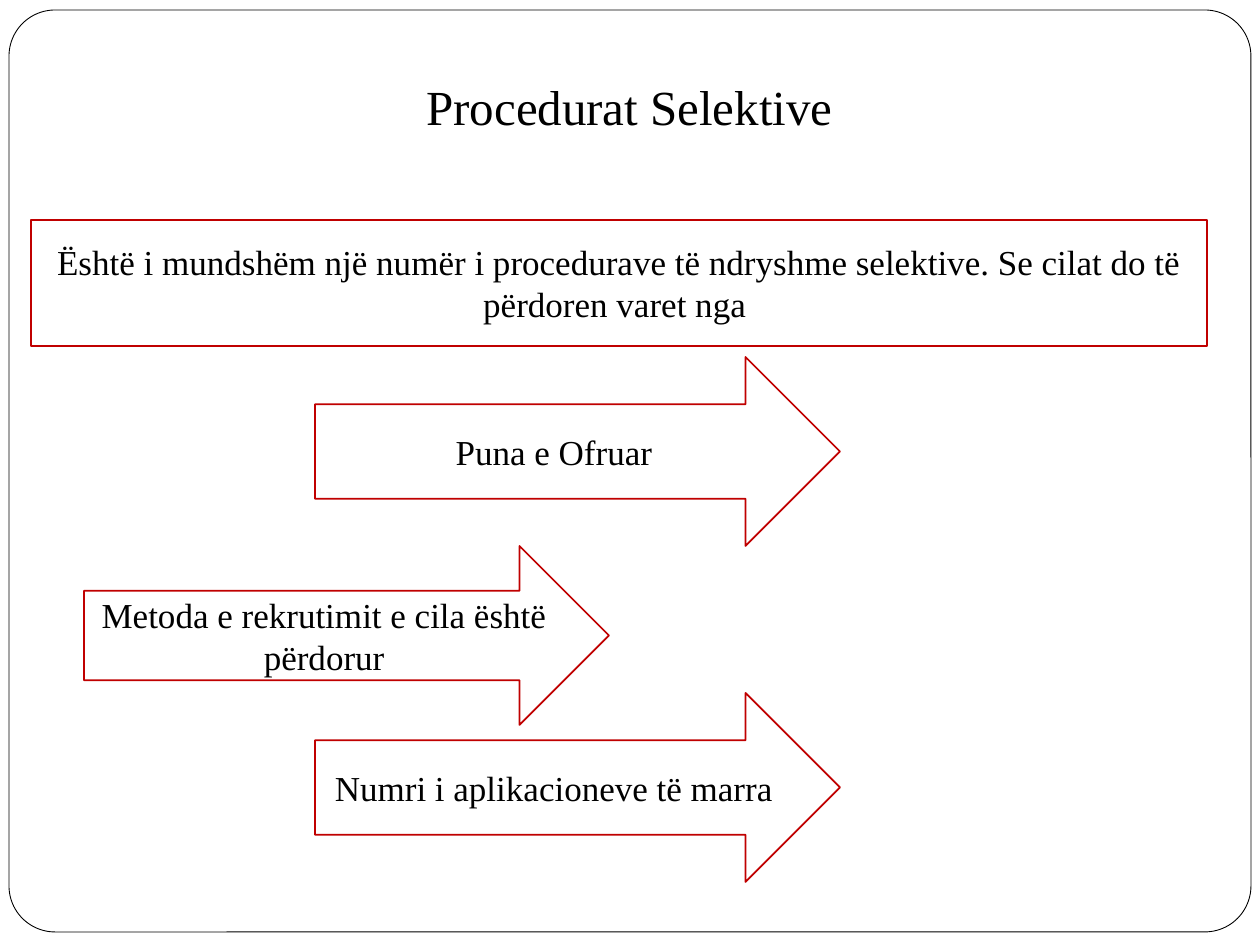
"""Build the slide on selective procedures."""
from pptx import Presentation
from pptx.dml.color import RGBColor
from pptx.enum.shapes import MSO_SHAPE as Kind
from pptx.enum.text import MSO_ANCHOR as Anchor, PP_ALIGN as Align
from pptx.util import Emu, Pt

BLACK = RGBColor(0, 0, 0)
WHITE = RGBColor(255, 255, 255)
RED = RGBColor(192, 0, 0)
FONT = "Times New Roman"

TITLE = "Procedurat Selektive"
INTRO = ("Është i mundshëm një numër i procedurave të ndryshme selektive. "
         "Se cilat do të përdoren varet nga ")
ARROWS = [
    ("Puna e Ofruar", (315, 357, 525, 189)),
    ("Metoda e rekrutimit e cila është përdorur", (84, 546, 525, 179)),
    ("Numri i aplikacioneve të marra", (315, 693, 525, 189)),
]
BOXES = [(INTRO, (31, 220, 1176, 126), Kind.RECTANGLE)]
BOXES += [(text, area, Kind.RIGHT_ARROW) for text, area in ARROWS]


def px(num):
    return Emu(round(num * 914400 / 126))


def write(shape, text, size):
    frame = shape.text_frame
    frame.word_wrap = True
    frame.vertical_anchor = Anchor.MIDDLE
    para = frame.paragraphs[0]
    para.alignment = Align.CENTER
    run = para.add_run()
    run.text = text
    run.font.name = FONT
    run.font.size = Pt(size)
    run.font.color.rgb = BLACK


def draw(slide, kind, area, color, width):
    shape = slide.shapes.add_shape(kind, *map(px, area))
    shape.shadow.inherit = False
    shape.fill.background()
    shape.line.color.rgb = color
    shape.line.width = Pt(width)
    return shape


def main():
    deck = Presentation()
    deck.slide_width, deck.slide_height = px(1260), px(945)
    slide = deck.slides.add_slide(deck.slide_layouts[5])

    border = draw(slide, Kind.ROUNDED_RECTANGLE, (9, 10, 1242, 922), BLACK, 0.5)
    border.adjustments[0] = 0.05
    border.fill.solid()
    border.fill.fore_color.rgb = WHITE

    title = slide.shapes.title
    title.left, title.top, title.width, title.height = map(px, (94, 32, 1071, 147))
    write(title, TITLE, 28)
    border._element.addnext(title._element)

    for text, area, kind in BOXES:
        write(draw(slide, kind, area, RED, 1), text, 20)

    deck.save("out.pptx")


if __name__ == "__main__":
    main()
